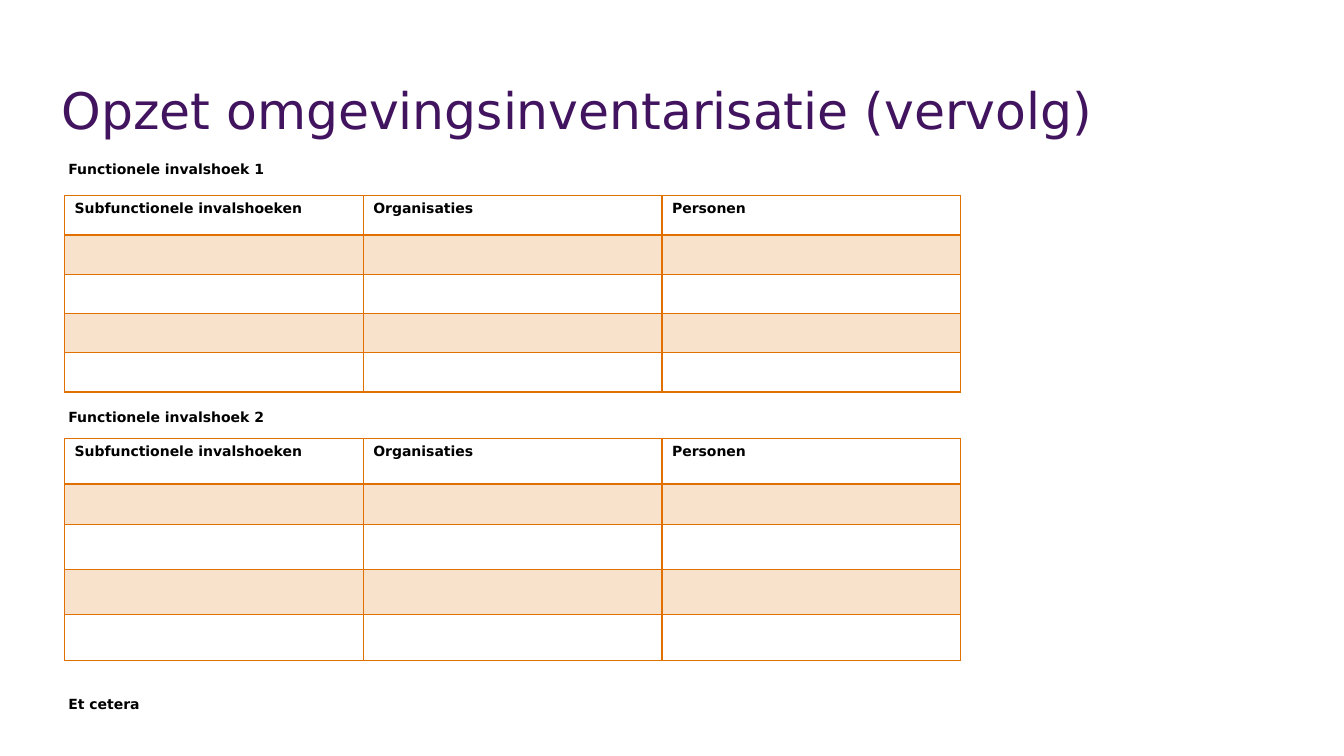
import dataclasses

import lxml.etree
import pptx
import pptx.dml.color
import pptx.enum.text
import pptx.oxml.ns
import pptx.util

Inches = pptx.util.Inches
Pt = pptx.util.Pt
qn = pptx.oxml.ns.qn


@dataclasses.dataclass(frozen=True)
class Theme:
    font: str = "DejaVu Sans"
    title_color: str = "42145F"
    text_color: str = "000000"
    accent: str = "E17000"
    band_opacity: int = 20
    title_size: int = 36
    text_size: int = 10
    line_width: float = 1
    header_line_width: float = 2


THEME = Theme()
HEADINGS = ("Subfunctionele invalshoeken", "Organisaties", "Personen")


def add_span(para, text, size, color, bold=False):
    span = para.add_run()
    span.text = text
    span.font.name = THEME.font
    span.font.size = Pt(size)
    span.font.bold = bold
    span.font.color.rgb = pptx.dml.color.RGBColor.from_string(color)


def place_title(page, left, top, width, height, text):
    title = page.shapes.title
    title.left, title.top = Inches(left), Inches(top)
    title.width, title.height = Inches(width), Inches(height)
    frame = title.text_frame
    frame.word_wrap = True
    frame.auto_size = pptx.enum.text.MSO_AUTO_SIZE.NONE
    frame.vertical_anchor = pptx.enum.text.MSO_ANCHOR.BOTTOM
    para = frame.paragraphs[0]
    para.alignment = pptx.enum.text.PP_ALIGN.LEFT
    para.line_spacing = 0.9
    add_span(para, text, THEME.title_size, THEME.title_color)


def add_caption(page, left, top, width, height, text, line_spacing=1.0):
    box = page.shapes.add_textbox(
        Inches(left), Inches(top), Inches(width), Inches(height))
    box.text_frame.word_wrap = True
    para = box.text_frame.paragraphs[0]
    para.line_spacing = line_spacing
    add_span(para, text, THEME.text_size, THEME.text_color, bold=True)


def fill_band(cell):
    cell.fill.solid()
    cell.fill.fore_color.rgb = pptx.dml.color.RGBColor.from_string(THEME.accent)
    color = cell._tc.tcPr.find(qn("a:solidFill"))[0]
    lxml.etree.SubElement(
        color, qn("a:alpha"), val=str(THEME.band_opacity * 1000))


def set_borders(cell, top, bottom):
    """Draw the four sides; the line elements must precede the cell's fill."""
    widths = {"a:lnL": THEME.line_width, "a:lnR": THEME.line_width,
              "a:lnT": top, "a:lnB": bottom}
    properties = cell._tc.get_or_add_tcPr()
    for index, (tag, width) in enumerate(widths.items()):
        line = lxml.etree.Element(qn(tag), w=str(Pt(width)))
        fill = lxml.etree.SubElement(line, qn("a:solidFill"))
        lxml.etree.SubElement(fill, qn("a:srgbClr"), val=THEME.accent)
        properties.insert(index, line)


def add_inventory(page, left, top, width, row_heights):
    """Add a table with a heading row and empty, alternately tinted rows."""
    frame = page.shapes.add_table(
        len(row_heights), len(HEADINGS), Inches(left), Inches(top),
        Inches(width), Inches(sum(row_heights)))
    table = frame.table
    table.horz_banding = False
    for column in table.columns:
        column.width = Inches(width / len(HEADINGS))
    for row_index, height in enumerate(row_heights):
        table.rows[row_index].height = Inches(height)
        for column_index, heading in enumerate(HEADINGS):
            cell = table.cell(row_index, column_index)
            para = cell.text_frame.paragraphs[0]
            if row_index == 0:
                add_span(para, heading, THEME.text_size, THEME.text_color,
                         bold=True)
            else:
                lxml.etree.SubElement(para._p, qn("a:endParaRPr"),
                                      sz=str(THEME.text_size * 100))
            if row_index % 2:
                fill_band(cell)
            else:
                cell.fill.background()
            set_borders(
                cell,
                THEME.header_line_width if row_index == 1 else THEME.line_width,
                THEME.header_line_width if row_index == 0 else THEME.line_width)


def build_inventory_page(deck):
    page = deck.slides.add_slide(deck.slide_layouts[5])
    place_title(page, 0.51, 0.4, 12.13, 1.04,
                "Opzet omgevingsinventarisatie (vervolg)")
    add_caption(page, 0.58, 1.51, 12, 0.3, "Functionele invalshoek 1", 1.2)
    add_inventory(page, 0.64, 1.94, 8.89, [0.39] * 5)
    add_caption(page, 0.58, 4, 2.69, 0.27, "Functionele invalshoek 2")
    add_inventory(page, 0.64, 4.35, 8.89, [0.45, 0.4, 0.45, 0.45, 0.45])
    add_caption(page, 0.58, 6.82, 2.71, 0.28, "Et cetera", 1.2)


def main():
    deck = pptx.Presentation()
    deck.slide_width, deck.slide_height = Inches(13.33), Inches(7.5)
    build_inventory_page(deck)
    deck.save("out.pptx")


if __name__ == "__main__":
    main()
